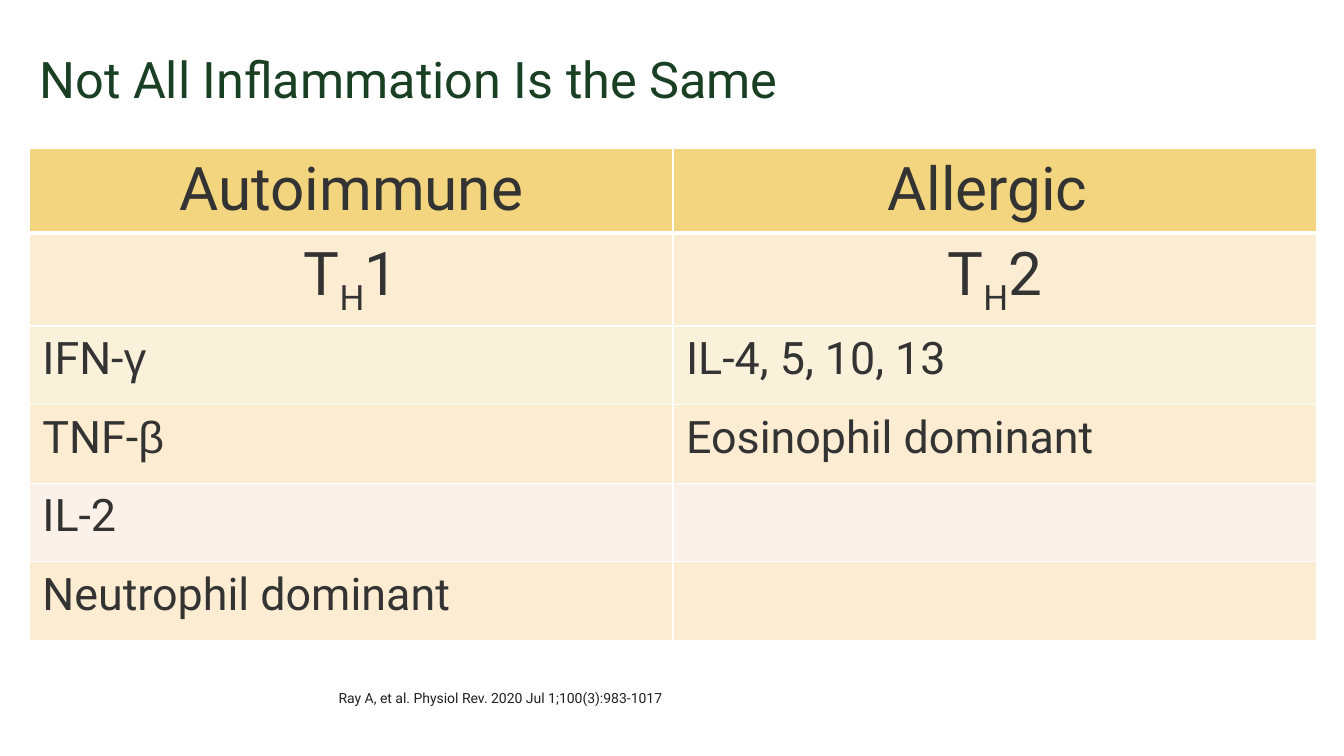
from lxml.etree import SubElement
from pptx import Presentation
from pptx.dml.color import RGBColor
from pptx.enum.text import MSO_ANCHOR as Anchor, PP_ALIGN as Align
from pptx.oxml.ns import qn
from pptx.util import Pt

PX = 9144  # 100 px to the inch


def color(hex_text):
    return RGBColor.from_string(hex_text)


class Page:
    font, ink, rule = "Roboto", "333333", "FFFFFF"

    def __init__(self, deck):
        self.slide = deck.slides.add_slide(deck.slide_layouts[5])

    def style(self, para, size, ink, align=None):
        para.alignment = align
        para.font.name = self.font
        para.font.size = Pt(size)
        para.font.color.rgb = color(ink)

    def fill_frame(self, frame, text, size, ink, anchor):
        frame.word_wrap = True
        frame.vertical_anchor = anchor
        para = frame.paragraphs[0]
        para.text = text
        para.line_spacing = 0.9
        self.style(para, size, ink, Align.LEFT)

    def title(self, text, box):
        shape = self.slide.shapes.title
        shape.left, shape.top, shape.width, shape.height = [n * PX for n in box]
        self.fill_frame(shape.text_frame, text, 36, "1A4023", Anchor.MIDDLE)

    def note(self, text, box):
        shape = self.slide.shapes.add_textbox(*[n * PX for n in box])
        self.fill_frame(shape.text_frame, text, 10, "212121", Anchor.TOP)

    def border(self, cell, side, width):
        line = SubElement(cell._tc.get_or_add_tcPr(), qn(f"a:ln{side}"), w=str(Pt(width)))
        fill = SubElement(line, qn("a:solidFill"))
        SubElement(fill, qn("a:srgbClr"), val=self.rule)

    def cell(self, cell, spans, size, align, fill, widths):
        cell.margin_left = cell.margin_right = 13 * PX
        cell.margin_top = cell.margin_bottom = 7 * PX
        for side in "LRTB":
            self.border(cell, side, widths.get(side, 1))
        cell.fill.solid()
        cell.fill.fore_color.rgb = color(fill)
        para = cell.text_frame.paragraphs[0]
        self.style(para, size, self.ink, align)
        for text in spans:
            span = para.add_run()
            span.text = text
            if text in GREEK:
                span.font.name = "Arial"
            elif text == SUBSCRIPT:
                span._r.get_or_add_rPr().set("baseline", "-25000")

    def table(self, rows, fills, box, headings):
        frame = self.slide.shapes.add_table(len(rows), len(rows[0]), *[n * PX for n in box])
        table = frame.table
        table.first_row = table.horz_banding = False
        for r, (row, fill) in enumerate(zip(rows, fills)):
            size, align = (43, Align.CENTER) if r < headings else (32, Align.LEFT)
            # Thick rule between the first row and the second
            widths = {0: {"B": 3}, 1: {"T": 3}}.get(r, {})
            for c, spans in enumerate(row):
                self.cell(table.cell(r, c), spans, size, align, fill, widths)


GREEK = ("γ", "β")
SUBSCRIPT = "H"
ROWS = [
    (["Autoimmune"], ["Allergic "]),
    (["T", SUBSCRIPT, "1"], ["T", SUBSCRIPT, "2"]),
    (["IFN-", "γ"], ["IL-4, 5, 10, 13"]),
    (["TNF-", "β"], ["Eosinophil dominant"]),
    (["IL-2"], []),
    (["Neutrophil dominant"], []),
]
FILLS = ["F2D57E", "FCEDD2", "FAF1DA", "FCEDD2", "FCF1E8", "FCEDD2"]


def main():
    deck = Presentation()
    deck.slide_width, deck.slide_height = 1333 * PX, 750 * PX
    page = Page(deck)

    # Heading
    page.title("Not All Inflammation Is the Same", (29, 19, 1278, 125))

    # Comparison of the two kinds
    page.table(ROWS, FILLS, (29, 147, 1277, 468), headings=2)

    # Citation
    page.note("Ray A, et al. Physiol Rev. 2020 Jul 1;100(3):983-1017", (326, 681, 980, 63))

    deck.save("out.pptx")


if __name__ == "__main__":
    main()
